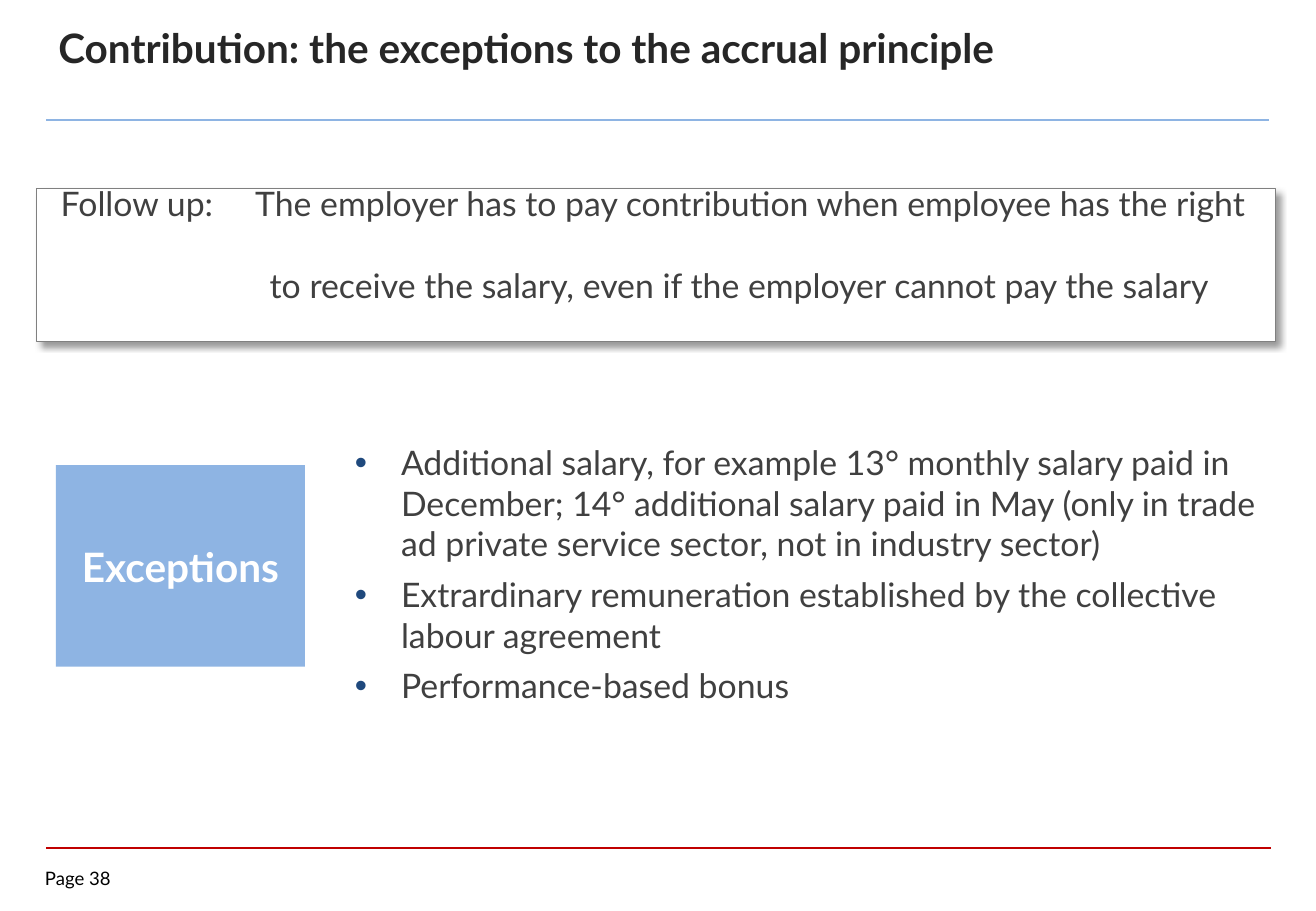
import dataclasses

import lxml.etree
import pptx
import pptx.dml.color
import pptx.enum.shapes
import pptx.enum.text
import pptx.oxml.ns
import pptx.util

COLUMNS, ROWS = 108.3, 75
CELL = pptx.util.Inches(0.1)
ALIGN = pptx.enum.text.PP_ALIGN
ANCHOR = pptx.enum.text.MSO_ANCHOR


@dataclasses.dataclass(frozen=True)
class Theme:
    font: str = "Lato"
    heading_size: int = 24
    body_size: int = 20
    footer_size: int = 11
    heading: str = "262626"
    body: str = "404040"
    accent: str = "8EB4E3"
    bullet: str = "1F497D"
    footer_rule: str = "C00000"
    border: str = "808080"
    white: str = "FFFFFF"
    black: str = "000000"


THEME = Theme()

EXCEPTIONS = [
    "Additional salary, for example 13° monthly salary paid in December; "
    "14° additional salary paid in May (only in trade ad private service "
    "sector, not in industry sector)",
    "Extrardinary remuneration established by the collective labour agreement",
    "Performance-based bonus",
]
FOLLOW_UP = [
    "Follow up:\tThe employer has to pay contribution when employee has the right",
    "to receive the salary, even if the employer cannot pay the salary",
]


def cells(count):
    return round(count * CELL)


def rgb(color):
    return pptx.dml.color.RGBColor.from_string(color)


def add_element(parent, tag, **attributes):
    element = lxml.etree.SubElement(parent, pptx.oxml.ns.qn(tag))
    for name, value in attributes.items():
        element.set(name, str(value))
    return element


def place(shape, left, top, width, height):
    shape.left, shape.top = cells(left), cells(top)
    shape.width, shape.height = cells(width), cells(height)


def write(shape, lines, size, color, bold=False, align=ALIGN.LEFT,
          anchor=ANCHOR.TOP, insets=(1, 0.5), gap=0):
    frame = shape.text_frame
    frame.text = "\n".join(lines)
    frame.word_wrap = True
    frame.auto_size = pptx.enum.text.MSO_AUTO_SIZE.NONE
    frame.vertical_anchor = anchor
    frame.margin_left = frame.margin_right = cells(insets[0])
    frame.margin_top = frame.margin_bottom = cells(insets[1])
    for index, para in enumerate(frame.paragraphs):
        para.alignment = align
        para.space_before = pptx.util.Pt(gap if index else 0)
        for span in para.runs:
            span.font.name = THEME.font
            span.font.size = pptx.util.Pt(size)
            span.font.bold = bold
            span.font.color.rgb = rgb(color)
    return frame.paragraphs


def add_rule(page, row, left, right, color, weight):
    rule = page.shapes.add_connector(
        pptx.enum.shapes.MSO_CONNECTOR.STRAIGHT,
        cells(left), cells(row), cells(right), cells(row))
    rule.line.color.rgb = rgb(color)
    rule.line.width = pptx.util.Pt(weight)
    add_element(rule._element.spPr, "a:effectLst")


def add_box(page, area, fill, border=None):
    box = page.shapes.add_shape(
        pptx.enum.shapes.MSO_SHAPE.RECTANGLE, *map(cells, area))
    box.shadow.inherit = False
    box.fill.solid()
    box.fill.fore_color.rgb = rgb(fill)
    if border:
        box.line.color.rgb = rgb(border)
        box.line.width = pptx.util.Pt(0.75)
    else:
        box.line.fill.background()
    return box


def cast_shadow(box):
    effects = box._element.spPr.find(pptx.oxml.ns.qn("a:effectLst"))
    shadow = add_element(
        effects, "a:outerShdw", blurRad=pptx.util.Pt(4), dist=pptx.util.Pt(3),
        dir=45 * 60000, algn="tl", rotWithShape=0)
    color = add_element(shadow, "a:srgbClr", val=THEME.black)
    add_element(color, "a:alpha", val=40000)


def add_bullet(para):
    properties = para._p.get_or_add_pPr()
    properties.set("marL", str(cells(3.8)))
    properties.set("indent", str(cells(-3.8)))
    color = add_element(properties, "a:buClr")
    add_element(color, "a:srgbClr", val=THEME.bullet)
    add_element(properties, "a:buSzPct", val=103000)
    add_element(properties, "a:buChar", char="•")


def add_follow_up(page):
    box = add_box(page, (3, 15.5, 102, 12.6), THEME.white, THEME.border)
    cast_shadow(box)
    first, second = write(box, FOLLOW_UP, THEME.body_size, THEME.body,
                          insets=(2, 0), gap=24)
    first.line_spacing = 0.88
    tabs = add_element(first._p.get_or_add_pPr(), "a:tabLst")
    add_element(tabs, "a:tab", pos=cells(16), algn="l")
    second._p.get_or_add_pPr().set("marL", str(cells(17.2)))


def add_footer(page):
    add_rule(page, 69.8, 3.8, 104.6, THEME.footer_rule, 1)
    box = page.shapes.add_textbox(*map(cells, (3.7, 71.4, 7.3, 2.2)))
    write(box, ["Page 38"], THEME.footer_size, THEME.black, insets=(0, 0))


def main():
    deck = pptx.Presentation()
    deck.slide_width, deck.slide_height = cells(COLUMNS), cells(ROWS)
    page = deck.slides.add_slide(deck.slide_layouts[1])

    title = page.shapes.title
    place(title, 3.8, 1.9, 86.6, 7.1)
    write(title, ["Contribution: the exceptions to the accrual principle"],
          THEME.heading_size, THEME.heading, bold=True, insets=(1, 0))
    add_rule(page, 9.9, 3.8, 104.4, THEME.accent, 1.5)

    add_follow_up(page)

    label = add_box(page, (4.6, 38.3, 20.5, 16.6), THEME.accent)
    write(label, ["Exceptions"], THEME.heading_size, THEME.white, bold=True,
          align=ALIGN.CENTER, anchor=ANCHOR.MIDDLE)

    body = page.placeholders[1]
    place(body, 28.2, 35.9, 76.3, 25.3)
    for para in write(body, EXCEPTIONS, THEME.body_size, THEME.body, gap=6):
        add_bullet(para)

    add_footer(page)
    deck.save("out.pptx")


if __name__ == "__main__":
    main()
